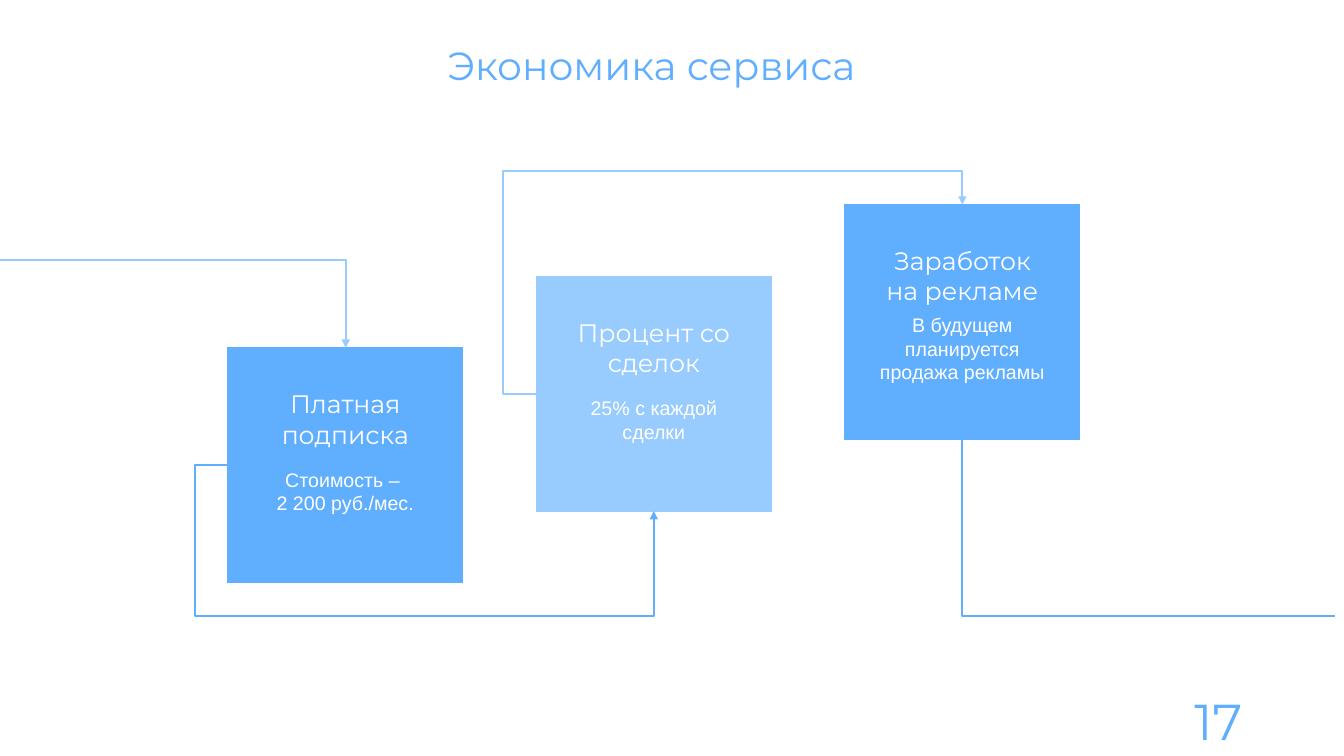
import pptx
import pptx.util
import pptx.dml.color
import pptx.enum.shapes
import pptx.enum.text
import pptx.oxml.ns
import lxml.etree

Inch = pptx.util.Inches
Pt = pptx.util.Pt
RGB = pptx.dml.color.RGBColor
Align = pptx.enum.text.PP_ALIGN
Anchor = pptx.enum.text.MSO_ANCHOR
qn = pptx.oxml.ns.qn

BLUE = RGB(0x60, 0xAE, 0xFE)
PALE = RGB(0x98, 0xCB, 0xFE)
WHITE = RGB(0xFF, 0xFF, 0xFF)

deck = pptx.Presentation()
deck.slide_width, deck.slide_height = Inch(13.33), Inch(7.5)
slide = deck.slides.add_slide(deck.slide_layouts[6])


def write(area, lines, size, font, color, align, **frame):
    box = slide.shapes.add_textbox(*map(Inch, area))
    body = box.text_frame
    for key, value in frame.items():
        setattr(body, key, value)
    for n, line in enumerate(lines):
        para = body.paragraphs[0] if n == 0 else body.add_paragraph()
        para.alignment = align
        run = para.add_run()
        run.text = line
        run.font.size, run.font.name = Pt(size), font
        run.font.color.rgb = color


def link(area, turn, flip, kind, bends, color, tip):
    left, top, wide, high = area
    start, end = (left + wide, left) if flip else (left, left + wide)
    line = slide.shapes.add_connector(
        pptx.enum.shapes.MSO_CONNECTOR.ELBOW,
        Inch(start), Inch(top), Inch(end), Inch(top + high))
    line.line.color.rgb = color
    line.line.width = Pt(1.5)
    props = line._element.spPr
    props.find(qn("a:xfrm")).set("rot", str(turn * 60000))
    shape = props.find(qn("a:prstGeom"))
    shape.set("prst", kind)
    guides = shape.find(qn("a:avLst"))
    for n, bend in enumerate(bends, 1):
        lxml.etree.SubElement(guides, qn("a:gd"), name=f"adj{n}",
                              fmla=f"val {round(bend * 100000)}")
    if tip:
        lxml.etree.SubElement(props.find(qn("a:ln")), qn(tip), type="triangle")
    lxml.etree.SubElement(props, qn("a:effectLst"))


write((4.34, 0.36, 4.65, 0.57), ["Экономика сервиса"], 28, "Montserrat",
      BLUE, Align.LEFT, word_wrap=False,
      auto_size=pptx.enum.text.MSO_AUTO_SIZE.SHAPE_TO_FIT_TEXT)

SIDE, STEP, RISE = 2.33, 3.06, 0.71
LEFT, TOP, EDGE, LOW = 2.26, 3.45, 0.33, 6.11
HALF = SIDE / 2
cards = [
    ("Платная подписка", ["Стоимость – ", "2 200 руб./мес."], BLUE),
    ("Процент со сделок", ["25% с каждой сделки"], PALE),
    ("Заработок на рекламе", ["В будущем планируется продажа рекламы"], BLUE),
]
inner = dict(word_wrap=True, vertical_anchor=Anchor.MIDDLE)
for side in ("left", "right", "top", "bottom"):
    inner["margin_" + side] = Inch(0.1)

for n, (head, lines, color) in enumerate(cards):
    x, y = LEFT + n * STEP, TOP - n * RISE
    card = slide.shapes.add_shape(
        pptx.enum.shapes.MSO_SHAPE.RECTANGLE, *map(Inch, (x, y, SIDE, SIDE)))
    card.shadow.inherit = False
    card.fill.solid()
    card.fill.fore_color.rgb = color
    card.line.color.rgb = color
    card.line.width = Pt(0.75)
    write((x + 0.2, y + 0.46, 1.93, 0.49), [head], 18, "Montserrat",
          WHITE, Align.CENTER, **inner)
    write((x + 0.23, y + 0.99, 1.87, 0.87), lines, 14, "Arial",
          WHITE, Align.CENTER, **inner)

span = STEP + HALF
fall = HALF - RISE
climb = HALF + RISE
last = LEFT + 2 * STEP + HALF
base = TOP - 2 * RISE + SIDE
drop = LOW - base
run = 3.7
link((1.28, 1.3, 0.87, 3.43), 90, True, "bentConnector2", [], PALE, "a:headEnd")
link((LEFT, TOP + HALF, span, fall), 0, False, "bentConnector4",
     [-EDGE / span, (LOW - TOP - HALF) / fall], BLUE, "a:tailEnd")
link((LEFT + STEP, TOP - 2 * RISE, span, climb), 180, True, "bentConnector4",
     [-EDGE / span, 1 + EDGE / climb], PALE, "a:tailEnd")
link((last + (run - drop) / 2, base + (drop - run) / 2, drop, run),
     270, True, "bentConnector2", [], BLUE, None)

write((9.42, 6.95, 3, 0.4), ["17"], 36, "Montserrat", BLUE, Align.RIGHT,
      word_wrap=True, vertical_anchor=Anchor.MIDDLE)

deck.save("out.pptx")
